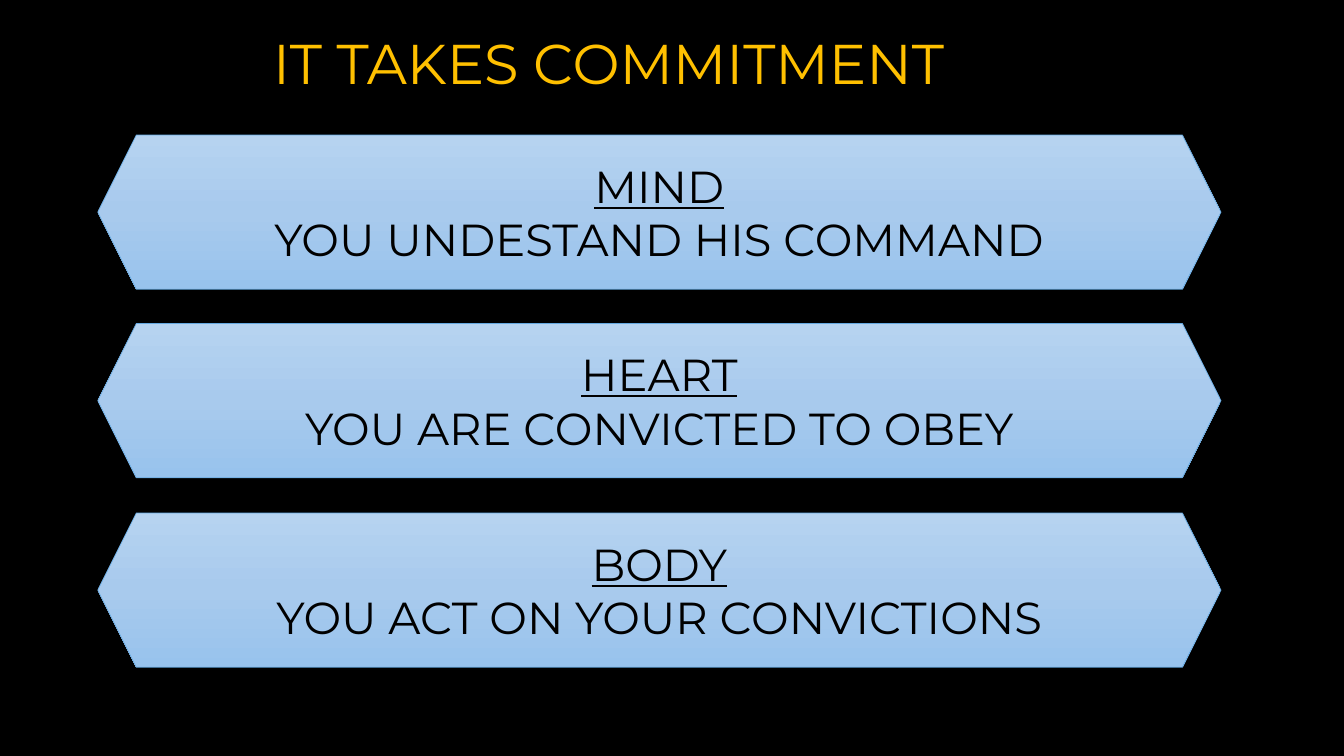
from copy import deepcopy
from dataclasses import dataclass

from pptx import Presentation
from pptx.dml.color import RGBColor
from pptx.enum.shapes import MSO_SHAPE
from pptx.enum.text import MSO_ANCHOR, MSO_AUTO_SIZE, PP_ALIGN
from pptx.oxml.ns import qn
from pptx.shapes.autoshape import Shape
from pptx.slide import Slide
from pptx.text.text import TextFrame
from pptx.util import Inches, Pt

HEXAGON = MSO_SHAPE.HEXAGON
MIDDLE = MSO_ANCHOR.MIDDLE
GROW = MSO_AUTO_SIZE.SHAPE_TO_FIT_TEXT
LEFT, CENTER = PP_ALIGN.LEFT, PP_ALIGN.CENTER

FONT = "Montserrat"
COLORS = {
    "background": "000000",
    "title": "FFC000",
    "text": "000000",
    "outline": "65A9E1",
    "top": "B6D3F0",
    "center": "A8CAED",
    "bottom": "98C3ED",
}


@dataclass
class Commitment:
    heading: str
    statement: str
    top: float


COMMITMENTS = [
    Commitment("MIND", "YOU UNDESTAND HIS COMMAND", 1.34),
    Commitment("HEART", "YOU ARE CONVICTED TO OBEY", 3.21),
    Commitment("BODY", "YOU ACT ON YOUR CONVICTIONS", 5.09),
]


def color(name: str) -> RGBColor:
    return RGBColor.from_string(COLORS[name])


def write(frame: TextFrame, text: str, *, size: int, ink: str,
          align: PP_ALIGN = LEFT, underline: bool = False) -> None:
    """Fill the first paragraph, or add one after existing text."""
    para = frame.add_paragraph() if frame.text else frame.paragraphs[0]
    para.alignment = align
    span = para.add_run()
    span.text = text
    span.font.name = FONT
    span.font.size = Pt(size)
    span.font.color.rgb = color(ink)
    span.font.underline = underline


def fill_gradient(shape: Shape) -> None:
    shape.fill.gradient()
    shape.fill.gradient_angle = 270  # counter-clockwise: runs top to bottom
    # Add a middle stop to the default pair
    stop_list = shape._element.spPr.find(qn("a:gradFill")).find(qn("a:gsLst"))
    stop_list.insert(1, deepcopy(stop_list[0]))
    stops = zip(shape.fill.gradient_stops, ("top", "center", "bottom"), (0, 0.5, 1))
    for stop, name, position in stops:
        stop.color.rgb = color(name)
        stop.position = position


def add_title(page: Slide, text: str) -> None:
    box = page.shapes.add_textbox(Inches(2.61), Inches(0.23), Inches(7.87), Inches(0.77))
    box.text_frame.word_wrap = False
    box.text_frame.auto_size = GROW
    write(box.text_frame, text, size=40, ink="title")


def add_commitment(page: Slide, item: Commitment) -> None:
    banner = page.shapes.add_shape(
        HEXAGON, Inches(0.97), Inches(item.top), Inches(11.14), Inches(1.53))
    banner.shadow.inherit = False
    fill_gradient(banner)
    banner.line.color.rgb = color("outline")
    banner.line.width = Pt(0.5)
    frame = banner.text_frame
    frame.word_wrap = True
    frame.vertical_anchor = MIDDLE
    write(frame, item.heading, size=32, ink="text", align=CENTER, underline=True)
    write(frame, item.statement, size=32, ink="text", align=CENTER)


def main() -> None:
    deck = Presentation()
    deck.slide_width, deck.slide_height = Inches(13.33), Inches(7.5)
    page = deck.slides.add_slide(deck.slide_layouts[6])
    page.background.fill.solid()
    page.background.fill.fore_color.rgb = color("background")

    # Title and the three banners
    add_title(page, "IT TAKES COMMITMENT")
    for item in COMMITMENTS:
        add_commitment(page, item)

    deck.save("out.pptx")


if __name__ == "__main__":
    main()
